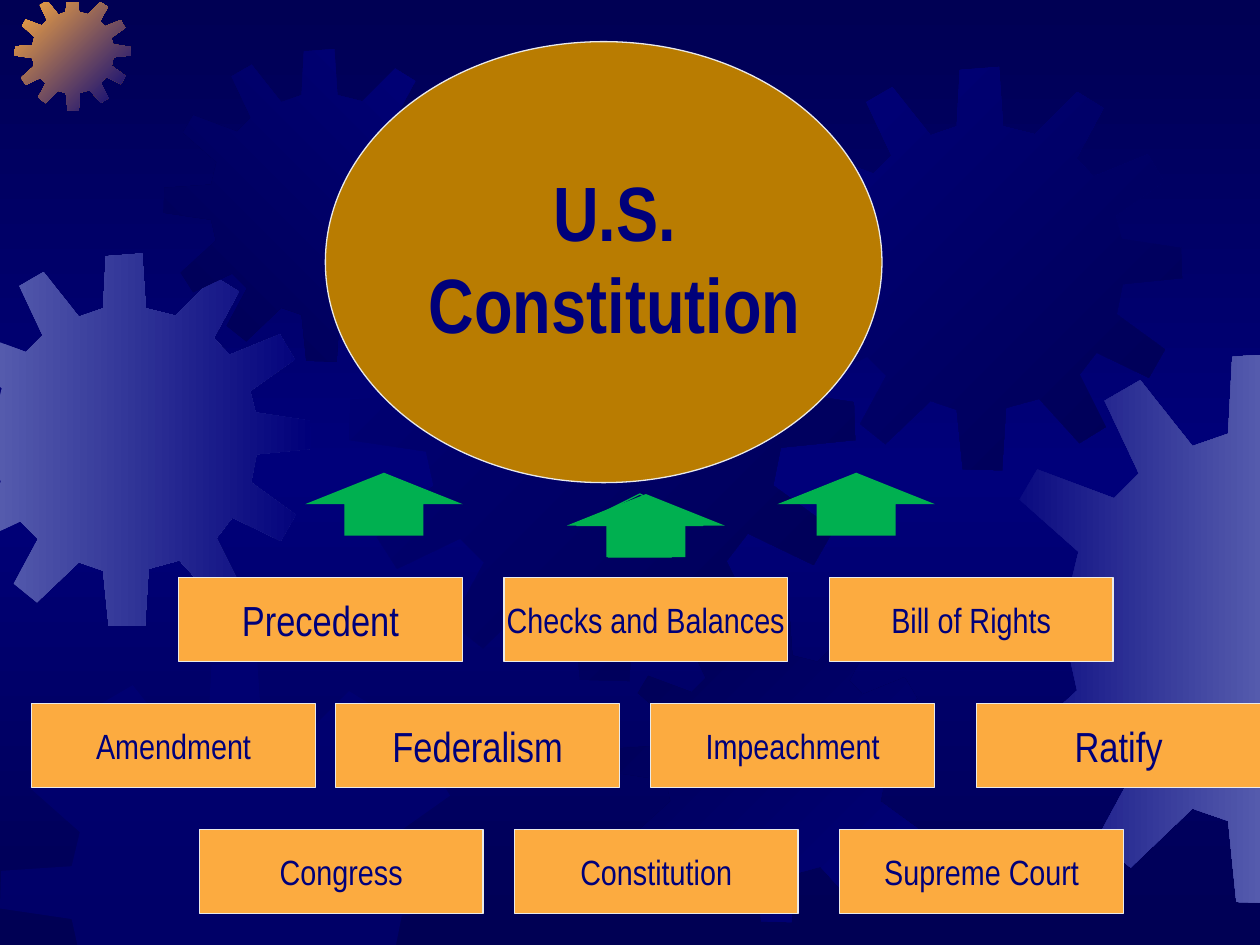
from copy import deepcopy
from lxml.etree import SubElement
from pptx import Presentation
from pptx.dml.color import RGBColor
from pptx.enum.shapes import MSO_SHAPE
from pptx.enum.text import MSO_ANCHOR, MSO_AUTO_SIZE, PP_ALIGN
from pptx.oxml.ns import qn
from pptx.util import Cm, Pt

NAVY, BLUE, LILAC = "000054", "00007A", "555BAD"
AMBER, GOLD, PALE, GREEN = "FCAB40", "B97C01", "EAEAEA", "00B050"

SPAN = 401
TEETH = [
    (255, 67), (223, 59), (219, 0), (180, 3), (177, 59), (151, 68), (113, 20), (87, 35),
    (112, 88), (94, 106), (38, 85), (25, 107), (68, 145), (61, 174), (1, 178), (0, 210),
    (61, 219), (67, 246), (22, 287), (38, 312), (88, 288), (107, 307), (81, 355), (106, 375),
    (151, 332), (177, 341), (183, 400), (222, 401), (226, 339), (259, 330), (299, 374), (325, 358),
    (299, 306), (316, 284), (368, 309), (384, 281), (336, 246), (342, 216), (401, 210), (400, 180),
    (341, 171), (335, 148), (383, 114), (367, 87), (313, 109), (296, 91), (323, 41), (297, 25),
]
EDGES = [(0, -0.03, 1), (0, 25.43, -1), (1, 0.05, 1), (1, 19.15, -1)]

GEARS = [
    (-1.24, 5.11, 7.52, LILAC, BLUE, 0),
    (0.3, -0.1, 2.33, AMBER, BLUE, 45),
    (3.3, 0.99, 6.3, NAVY, BLUE, 315),
    (7.04, 3.53, 10.2, BLUE, NAVY, 45),
    (0, 13.34, 9.5, BLUE, None, 0),
    (12.47, 12.29, 6.3, NAVY, BLUE, 45),
    (15.7, 1.35, 8.13, BLUE, NAVY, 45),
    (19.86, 7.11, 11.1, BLUE, LILAC, 0),
]
ROWS = [
    [(3.6, "Precedent", 24), (10.16, "Checks and Balances", 20), (16.72, "Bill of Rights", 20)],
    [(0.64, "Amendment", 20), (6.77, "Federalism", 24), (13.12, "Impeachment", 20), (19.69, "Ratify", 24)],
    [(4.02, "Congress", 20), (10.37, "Constitution", 20), (16.93, "Supreme Court", 20)],
]


def tint(code):
    return RGBColor.from_string(code)


def clip(dots, axis, edge, side):
    kept = []
    for a, b in zip(dots, dots[1:] + dots[:1]):
        da, db = (a[axis] - edge) * side, (b[axis] - edge) * side
        if da >= 0:
            kept.append(a)
        if da * db < 0:
            part = da / (da - db)
            kept.append((a[0] + part * (b[0] - a[0]), a[1] + part * (b[1] - a[1])))
    return kept


class Deck:
    font = "Arial Narrow"
    ink = BLUE

    def __init__(self):
        self.file = Presentation()
        self.file.slide_width, self.file.slide_height = Cm(25.4), Cm(19.05)
        self.slide = self.file.slides.add_slide(self.file.slide_layouts[5])

    def blend(self, fill, root, stops, turn):
        fill.gradient()
        fill.gradient_angle = (360 - turn) % 360
        group = root.xpath(".//a:gsLst")[0]
        while len(group) < len(stops):
            group.append(deepcopy(group[0]))
        for stop, (spot, code) in zip(fill.gradient_stops, stops):
            stop.position = spot
            stop.color.rgb = tint(code)

    def back(self, *stops):
        self.blend(self.slide.background.fill, self.slide.element, stops, 90)

    def gear(self, left, top, size, first, last, turn):
        dots = [(left + x * size / SPAN, top + y * size / SPAN) for x, y in TEETH]
        for edge in EDGES:
            dots = clip(dots, *edge)
        dots = [(Cm(x), Cm(y)) for x, y in dots]
        pen = self.slide.shapes.build_freeform(*dots[0])
        pen.add_line_segments(dots[1:], close=True)
        shape = pen.convert_to_shape()
        shape.shadow.inherit = False
        shape.line.fill.background()
        if last:
            self.blend(shape.fill, shape.element, [(0, first), (1, last)], turn)
        else:
            shape.fill.solid()
            shape.fill.fore_color.rgb = tint(first)
            color = shape.element.xpath("./p:spPr/a:solidFill/a:srgbClr")[0]
            SubElement(color, qn("a:alpha")).set("val", "50000")

    def shape(self, kind, left, top, wide, high, fill=None, line=None):
        shape = self.slide.shapes.add_shape(kind, Cm(left), Cm(top), Cm(wide), Cm(high))
        shape.shadow.inherit = False
        if fill:
            shape.fill.solid()
            shape.fill.fore_color.rgb = tint(fill)
        else:
            shape.fill.background()
        if line:
            shape.line.color.rgb = tint(line)
            shape.line.width = Pt(0.75)
        else:
            shape.line.fill.background()
        return shape

    def label(self, frame, text, size, bold=False):
        para = frame.paragraphs[0]
        para.alignment = PP_ALIGN.CENTER
        run = para.add_run()
        run.text = text
        run.font.name, run.font.size, run.font.bold = self.font, Pt(size), bold
        run.font.color.rgb = tint(self.ink)

    def title(self, text, left, top, wide, high):
        title = self.slide.shapes.title
        title.left, title.top, title.width, title.height = Cm(left), Cm(top), Cm(wide), Cm(high)
        frame = title.text_frame
        frame.auto_size = MSO_AUTO_SIZE.NONE
        frame.word_wrap = True
        frame.vertical_anchor = MSO_ANCHOR.MIDDLE
        self.label(frame, text, 44, True)
        self.slide.shapes.element.append(title.element)

    def brick(self, left, top, text, size):
        frame = self.shape(MSO_SHAPE.RECTANGLE, left, top, 5.72, 1.69, AMBER, PALE).text_frame
        frame.word_wrap = False
        frame.vertical_anchor = MSO_ANCHOR.MIDDLE
        self.label(frame, text, size)

    def arrow(self, left, top, wide, fill=None, line=None):
        self.shape(MSO_SHAPE.UP_ARROW, left, top, wide, 1.27, fill, line)


def main():
    deck = Deck()
    deck.back((0, NAVY), (0.5, BLUE), (1, NAVY))
    for gear in GEARS:
        deck.gear(*gear)
    deck.shape(MSO_SHAPE.OVAL, 6.56, 0.84, 11.22, 8.89, GOLD, PALE)
    deck.title("U.S. Constitution", 8.05, 3.18, 8.69, 3.99)
    for step, row in enumerate(ROWS):
        for left, text, size in row:
            deck.brick(left, 11.64 + 2.54 * step, text, size)
    deck.arrow(11.43, 9.96, 3.18, fill=GREEN)
    deck.arrow(11.63, 9.96, 2.54, line=GREEN)
    for left in (15.67, 6.15):
        deck.arrow(left, 9.53, 3.18, fill=GREEN)
    deck.file.save("out.pptx")


if __name__ == "__main__":
    main()
